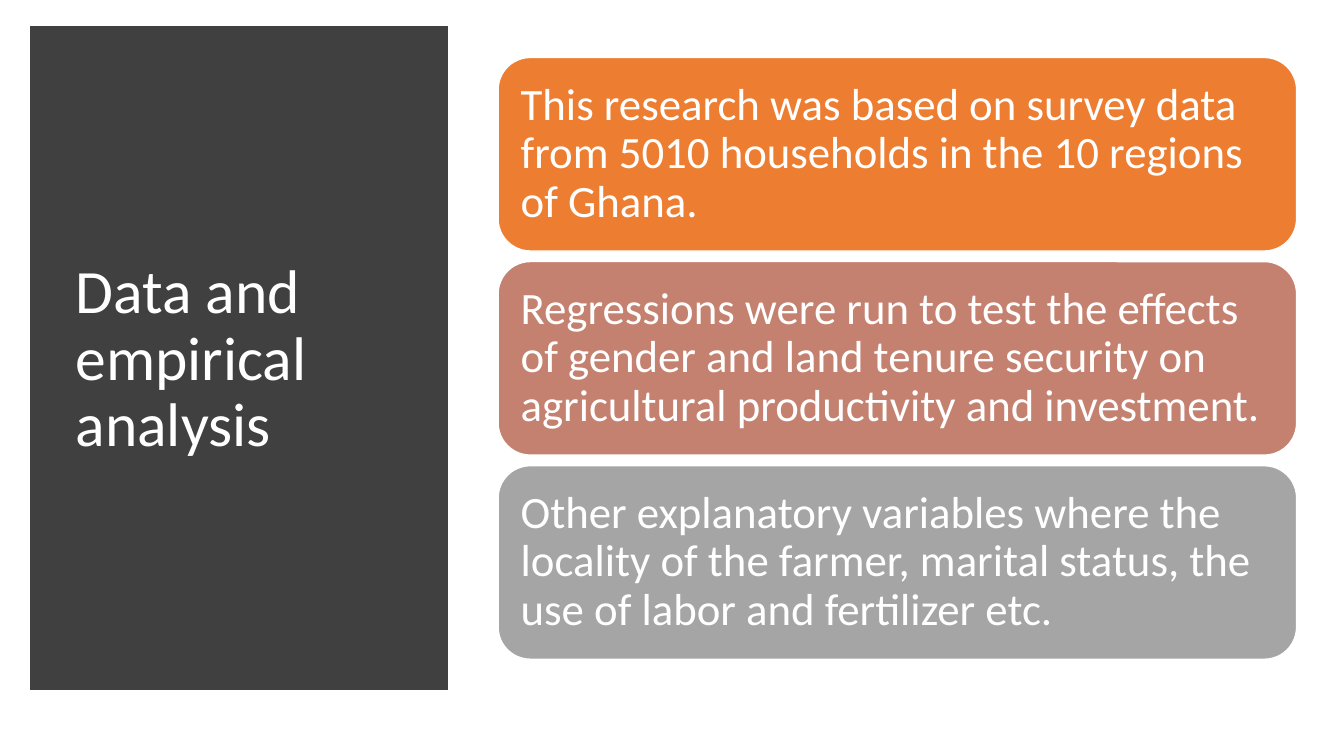
from dataclasses import dataclass

from lxml.etree import SubElement
from pptx import Presentation
from pptx.dml.color import RGBColor
from pptx.enum.shapes import MSO_SHAPE as Shape
from pptx.enum.text import MSO_ANCHOR as Anchor, MSO_AUTO_SIZE as AutoSize, PP_ALIGN as Align
from pptx.oxml.ns import qn
from pptx.util import Inches, Pt

TITLE = "Data and empirical analysis"
POINTS = [
    ("This research was based on survey data from 5010 households in the 10 regions of Ghana.", "ED7D31"),
    ("Regressions were run to test the effects of gender and land tenure security on "
     "agricultural productivity and investment.", "C48170"),
    ("Other explanatory variables where the locality of the farmer, marital status, "
     "the use of labor and fertilizer etc.", "A5A5A5"),
]


@dataclass(frozen=True)
class Theme:
    font: str = "Calibri"
    panel: str = "404040"
    white: str = "FFFFFF"
    title_size: int = 44
    point_size: int = 32


THEME = Theme()
PANEL_BOX = (0.37, 0.33, 4, 6.45)
TITLE_BOX = (0.65, 0.7, 3.46, 5.75)
CARD_LEFT, CARD_TOP, CARD_WIDTH, CARD_HEIGHT = 4.94, 0.57, 7.92, 1.92
CARD_STEP = 2.025
CARD_INSET = 0.13


def add_box(slide, kind, box, fill, line, line_width):
    shape = slide.shapes.add_shape(kind, *map(Inches, box))
    shape.shadow.inherit = False
    shape.fill.solid()
    shape.fill.fore_color.rgb = RGBColor.from_string(fill)
    shape.line.color.rgb = RGBColor.from_string(line)
    shape.line.width = Pt(line_width)
    return shape


def write_text(shape, text, size):
    frame = shape.text_frame
    frame.text = text
    frame.word_wrap = True
    frame.auto_size = AutoSize.NONE
    frame.vertical_anchor = Anchor.MIDDLE
    paragraph = frame.paragraphs[0]
    paragraph.alignment = Align.LEFT
    paragraph.line_spacing = 0.9
    paragraph.font.name = THEME.font
    paragraph.font.size = Pt(size)
    paragraph.font.color.rgb = RGBColor.from_string(THEME.white)
    return frame


def add_title(slide):
    title = slide.shapes.title
    title.left, title.top, title.width, title.height = map(Inches, TITLE_BOX)
    write_text(title, TITLE, THEME.title_size)
    panel = add_box(slide, Shape.RECTANGLE, PANEL_BOX, THEME.panel, THEME.panel, 10)
    SubElement(panel.line._get_or_add_ln(), qn("a:miter"), lim="800000")
    title.element.addprevious(panel.element)


def add_card(slide, index, text, fill):
    box = (CARD_LEFT, CARD_TOP + index * CARD_STEP, CARD_WIDTH, CARD_HEIGHT)
    card = add_box(slide, Shape.ROUNDED_RECTANGLE, box, fill, THEME.white, 1)
    frame = write_text(card, text, THEME.point_size)
    frame.margin_left = frame.margin_right = Inches(CARD_INSET)
    frame.margin_top = frame.margin_bottom = Inches(CARD_INSET)


def main():
    presentation = Presentation()
    presentation.slide_width = Inches(13.33)
    presentation.slide_height = Inches(7.5)
    slide = presentation.slides.add_slide(presentation.slide_layouts[5])
    add_title(slide)
    for index, (text, fill) in enumerate(POINTS):
        add_card(slide, index, text, fill)
    presentation.save("out.pptx")


if __name__ == "__main__":
    main()
